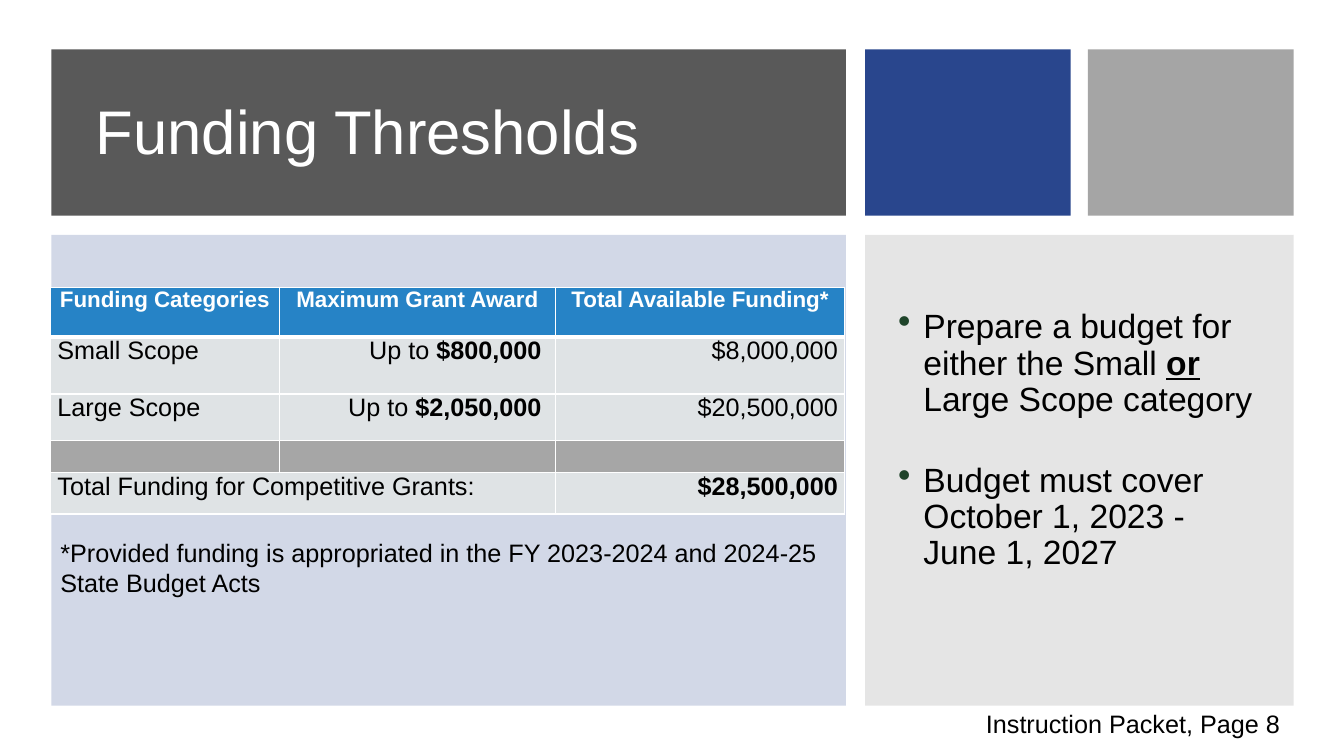
from lxml.etree import SubElement
from pptx import Presentation
from pptx.dml.color import RGBColor
from pptx.enum.shapes import MSO_SHAPE
from pptx.enum.text import MSO_ANCHOR, PP_ALIGN
from pptx.oxml.ns import qn
from pptx.util import Inches, Pt

WHITE = RGBColor(0xFF, 0xFF, 0xFF)
BLACK = RGBColor(0, 0, 0)
CHARCOAL = RGBColor(0x59, 0x59, 0x59)
NAVY = RGBColor(0x1E, 0x3D, 0x87)
SILVER = RGBColor(0xA5, 0xA5, 0xA5)
GREY = RGBColor(0x80, 0x80, 0x80)
HEADER_BLUE = RGBColor(0x26, 0x83, 0xC6)
CELL_GREY = RGBColor(0xDF, 0xE3, 0xE5)
DIVIDER_GREY = RGBColor(0xA6, 0xA6, 0xA6)
BULLET_GREEN = RGBColor(0x1F, 0x44, 0x2A)

# Grid: a wide column, then a side column split into two tiles; a banner row and a content row
WIDE_X, WIDE_W = 0.51, 7.88
SIDE_X, SIDE_W = 8.58, 4.25
TILE_W = 2.04
TILE_X = SIDE_X + SIDE_W - TILE_W
BANNER_Y, BANNER_H = 0.49, 1.65
CONTENT_Y, CONTENT_H = 2.33, 4.67

PANELS = [
    (SIDE_X, BANNER_Y, TILE_W, BANNER_H, NAVY, 95),
    (TILE_X, BANNER_Y, TILE_W, BANNER_H, SILVER, 100),
    (WIDE_X, CONTENT_Y, WIDE_W, CONTENT_H, NAVY, 20),
    (SIDE_X, CONTENT_Y, SIDE_W, CONTENT_H, GREY, 20),
]

COL_WIDTHS = [2.27, 2.74, 2.87]
ROW_HEIGHTS = [0.49, 0.57, 0.46, 0.32, 0.41]
BOLD = {"bold": True}
HEADERS = ["Funding Categories", "Maximum Grant Award", "Total Available Funding*"]
TABLE_ROWS = [
    [[(text, BOLD)] for text in HEADERS],
    [[("Small Scope", {})], [("Up to ", {}), ("$800,000 ", BOLD)], [("$8,000,000", {})]],
    [[("Large Scope ", {})], [("Up to ", {}), ("$2,050,000 ", BOLD)], [("$20,500,000", {})]],
    [[], [], []],
    [[("Total Funding for Competitive Grants:", {})], [], [("$28,500,000", BOLD)]],
]
BULLETS = [
    [("Prepare a budget for either the Small ", {}),
     ("or", {"bold": True, "underline": True}),
     (" Large Scope category", {})],
    [("Budget must cover October 1, 2023 - June 1, 2027", {})],
]


def set_attrs(target, values):
    for name, value in values.items():
        setattr(target, name, value)


def place(sp, x, y, w, h):
    set_attrs(sp, {"left": Inches(x), "top": Inches(y), "width": Inches(w), "height": Inches(h)})


def add_runs(p, runs, size, color=BLACK):
    """Write (text, font values) pairs into a paragraph."""
    for text, values in runs:
        r = p.add_run()
        r.text = text
        set_attrs(r.font, {"name": "Arial", "size": Pt(size), **values})
        r.font.color.rgb = color


def add_panel(slide, x, y, w, h, color, opacity=100):
    sp = slide.shapes.add_shape(MSO_SHAPE.RECTANGLE, Inches(x), Inches(y), Inches(w), Inches(h))
    sp.shadow.inherit = False
    sp.fill.solid()
    sp.fill.fore_color.rgb = color
    sp.line.fill.background()
    if opacity < 100:
        fill_color = sp.element.spPr.find(qn("a:solidFill")).find(qn("a:srgbClr"))
        SubElement(fill_color, qn("a:alpha"), val=str(opacity * 1000))
    return sp


def add_textbox(slide, x, y, w, h, wrap=True):
    tf = slide.shapes.add_textbox(Inches(x), Inches(y), Inches(w), Inches(h)).text_frame
    tf.word_wrap = wrap
    return tf


def format_title(slide, banner):
    """Place the title placeholder in front of its banner."""
    title = slide.shapes.title
    banner.element.addnext(title.element)
    place(title, 0.85, 0.76, 7.23, 1.14)
    title.text_frame.vertical_anchor = MSO_ANCHOR.MIDDLE
    p = title.text_frame.paragraphs[0]
    set_attrs(p, {"alignment": PP_ALIGN.LEFT, "line_spacing": 0.9})
    add_runs(p, [("Funding Thresholds", {})], 44, WHITE)


def set_bullet(p):
    pPr = p._p.get_or_add_pPr()
    pPr.set("marL", str(Inches(0.25)))
    pPr.set("indent", str(-Inches(0.25)))
    SubElement(SubElement(pPr, qn("a:buClr")), qn("a:srgbClr"), val=str(BULLET_GREEN))
    SubElement(pPr, qn("a:buSzPct"), val="110000")
    SubElement(pPr, qn("a:buChar"), char="•")


def add_bullets(slide):
    tf = add_textbox(slide, 8.81, CONTENT_Y, 3.79, 4.09)
    tf.vertical_anchor = MSO_ANCHOR.MIDDLE
    for i, runs in enumerate(BULLETS):
        p = tf.add_paragraph() if i else tf.paragraphs[0]
        set_bullet(p)
        set_attrs(p, {"line_spacing": 0.9, "space_before": Pt(32 if i else 0)})
        add_runs(p, runs, 24)


def set_borders(cell, widths):
    """Draw white borders; widths maps a side (L, R, T, B) to points."""
    tcPr = cell._tc.get_or_add_tcPr()
    for side, width in widths.items():
        ln = SubElement(tcPr, qn(f"a:ln{side}"), w=str(Pt(width)))
        SubElement(SubElement(ln, qn("a:solidFill")), qn("a:srgbClr"), val=str(WHITE))


def format_cell(cell, runs, row, col):
    is_header = row == 0
    set_attrs(cell, {"margin_left": Inches(0.07), "margin_right": Inches(0.07),
                     "margin_top": 0, "margin_bottom": 0})
    set_borders(cell, {"L": 1, "R": 1, "T": 3 if row == 1 else 1, "B": 3 if is_header else 1})
    cell.fill.solid()
    cell.fill.fore_color.rgb = {0: HEADER_BLUE, 3: DIVIDER_GREY}.get(row, CELL_GREY)
    p = cell.text_frame.paragraphs[0]
    if is_header:
        p.alignment = PP_ALIGN.CENTER
    else:
        p.alignment = PP_ALIGN.RIGHT if col else PP_ALIGN.JUSTIFY
    add_runs(p, runs, 16 if is_header else 18, WHITE if is_header else BLACK)


def add_funding_table(slide):
    table = slide.shapes.add_table(
        len(ROW_HEIGHTS), len(COL_WIDTHS), Inches(0.5), Inches(2.85),
        Inches(WIDE_W), Inches(sum(ROW_HEIGHTS))).table
    for column, width in zip(table.columns, COL_WIDTHS):
        column.width = Inches(width)
    for row, height in zip(table.rows, ROW_HEIGHTS):
        row.height = Inches(height)
    for i, row in enumerate(TABLE_ROWS):
        for j, runs in enumerate(row):
            format_cell(table.cell(i, j), runs, i, j)
    table.cell(4, 0).merge(table.cell(4, 1))


def add_note(slide, text, *box, wrap=True):
    tf = add_textbox(slide, *box, wrap=wrap)
    add_runs(tf.paragraphs[0], [(text, {})], 18)


def main():
    prs = Presentation()
    set_attrs(prs, {"slide_width": Inches(13.33), "slide_height": Inches(7.5)})
    slide = prs.slides.add_slide(prs.slide_layouts[5])
    banner = add_panel(slide, WIDE_X, BANNER_Y, WIDE_W, BANNER_H, CHARCOAL)
    format_title(slide, banner)
    for panel in PANELS:
        add_panel(slide, *panel)
    add_bullets(slide)
    add_note(slide, "Instruction Packet, Page 8", 9.68, 6.98, 3.15, 0.4, wrap=False)
    add_funding_table(slide)
    add_note(slide, "*Provided funding is appropriated in the FY 2023-2024 and 2024-25 State Budget Acts",
             0.5, 5.28, WIDE_W, 0.71)
    prs.save("out.pptx")


if __name__ == "__main__":
    main()
